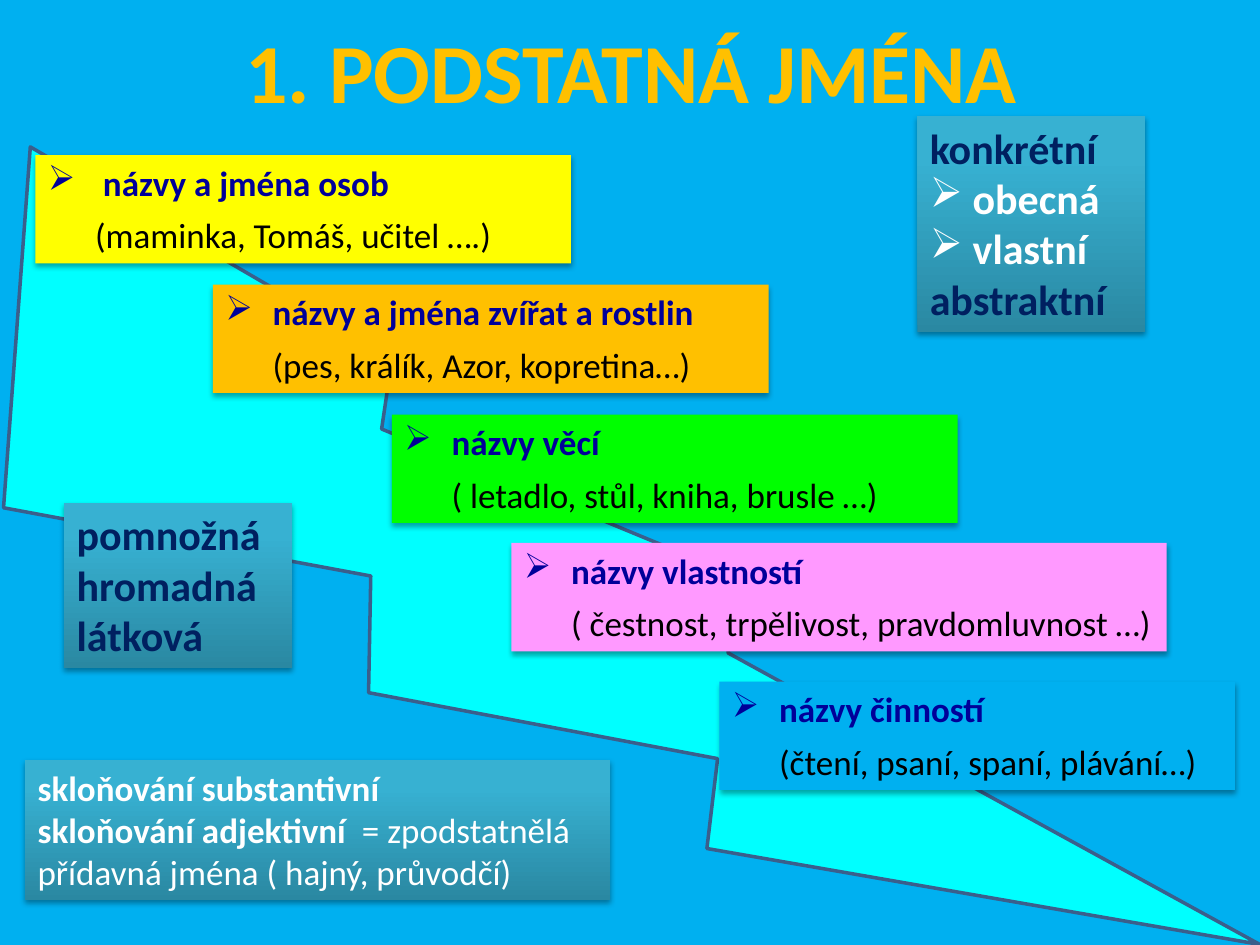
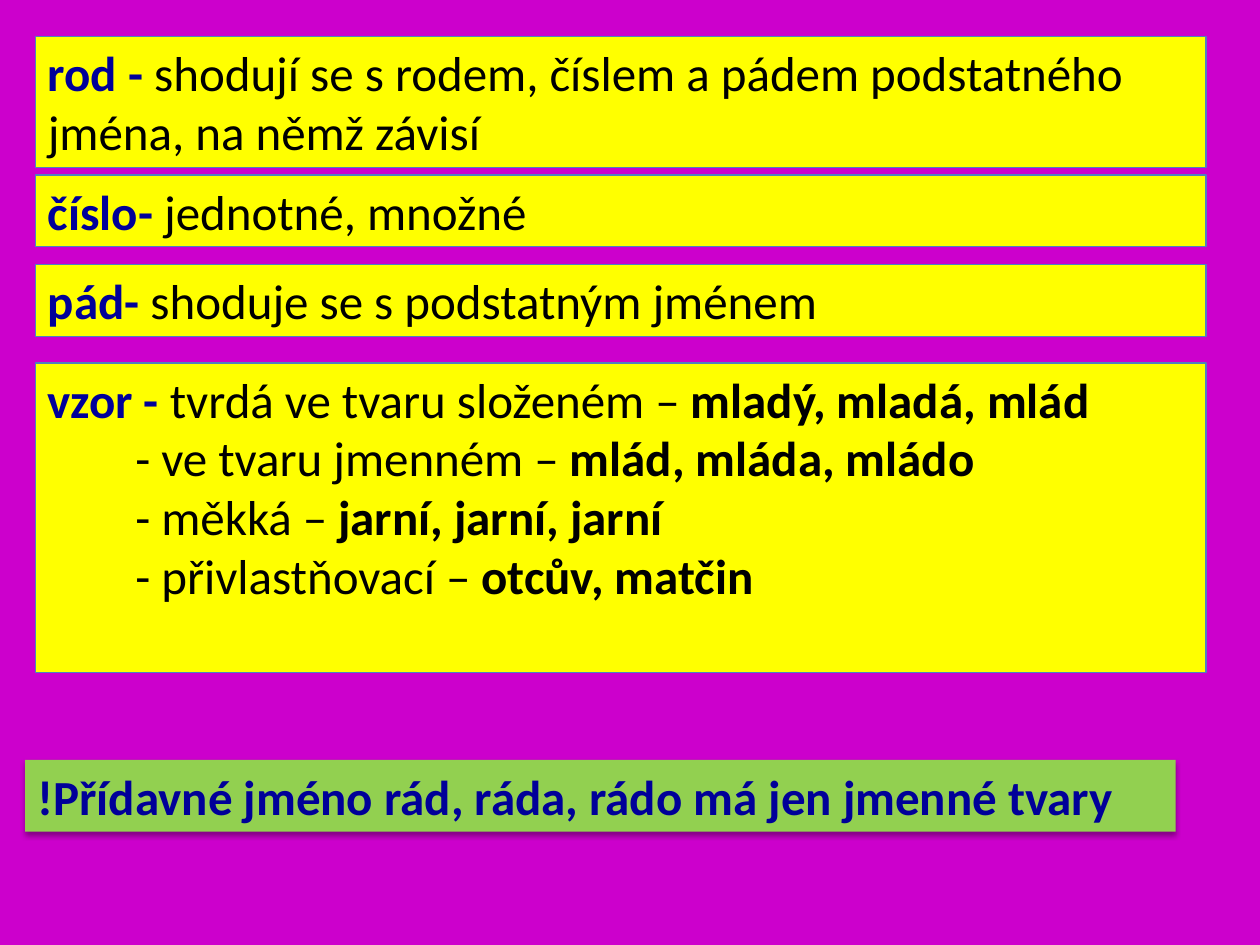
"""Build two grammar slides on Czech nouns and adjectives."""
import pptx
import pptx.dml.color
import pptx.enum.shapes
import pptx.enum.text
import pptx.oxml
import pptx.oxml.ns
import pptx.util

Pt = pptx.util.Pt


class Theme:
    font = "Calibri"
    sky, plum = "00B0F0", "CC00CC"
    navy, deep, black, white = "000099", "002060", "000000", "FFFFFF"
    gold, yellow, lime, pink = "FFC000", "FFFF00", "00FF00", "FF99FF"
    cyan, leaf = "00FFFF", "92D050"
    edge, rim = "3A5F8C", "4F81BD"
    dark, light = "2A88A2", "37B1D2"
    head, large, mid, small = 48, 28, 24, 20


TITLE = "1. PODSTATNÁ JMÉNA"
BOLT = (125.3, -42.5, 375.8, 805.7)
STEP_H = 61.9
STEPS = [
    (20.2, 88.6, 306, Theme.yellow, " názvy a jména osob", "(maminka, Tomáš, učitel ….)"),
    (121.7, 162.7, 317.5, Theme.gold, "názvy a jména zvířat a rostlin",
     "(pes, králík, Azor, kopretina…)"),
    (223.9, 236.9, 323.3, Theme.lime, "názvy věcí", "( letadlo, stůl, kniha, brusle …)"),
    (292.3, 310.3, 374.4, Theme.pink, "názvy vlastností",
     "( čestnost, trpělivost, pravdomluvnost …)"),
    (411.1, 389.5, 294.5, Theme.sky, "názvy činností", "(čtení, psaní, spaní, plávání…)"),
]
PANELS = [
    ((524.2, 66.2, 130.3, 123.8), Theme.mid, [
        ([("konkrétní", Theme.deep, True)], {}),
        ([(" obecná", Theme.white, True)], {"mark": Theme.white}),
        ([(" vlastní", Theme.white, True)], {"mark": Theme.white}),
        ([("abstraktní", Theme.deep, True)], {})]),
    ((14.4, 434.2, 334.1, 79.9), Theme.small, [
        ([("skloňování substantivní", Theme.white, True)], {}),
        ([("skloňování adjektivní  ", Theme.white, True),
          ("= zpodstatnělá přídavná jména ( hajný, průvodčí)", Theme.white, False)], {})]),
    ((36.7, 287.3, 130.3, 94.3), Theme.mid, [
        ([(word, Theme.deep, True)], {}) for word in ("pomnožná", "hromadná", "látková")]),
]
CARD_X, CARD_W = 20.2, 668.9
CARDS = [
    (20.9, 74.9, "rod -",
     [(" shodují se s rodem, číslem a pádem podstatného jména, na němž závisí", "")]),
    (100.1, 41, "číslo-", [(" jednotné, množné", "")]),
    (151.2, 41, "pád-", [(" shoduje se s podstatným jménem", "")]),
    (207.4, 177.1, "vzor -", [
        (" tvrdá ve tvaru složeném – ", "mladý, mladá, mlád"),
        ("- ve tvaru jmenném – ", "mlád, mláda, mládo"),
        ("- měkká – ", "jarní, jarní, jarní"),
        ("- přivlastňovací – ", "otcův, matčin")]),
]
NOTE = "!Přídavné jméno rád, ráda, rádo má jen jmenné tvary"
NOTE_BOX = (14.4, 434.2, 657.4, 41)
HANG, INSET = 27, 50


def rgb(code):
    """Turn a hex code into a colour."""
    return pptx.dml.color.RGBColor.from_string(code)


def paint(fill, code):
    """Fill with one solid colour."""
    fill.solid()
    fill.fore_color.rgb = rgb(code)


def attach(node, xml):
    """Append a drawing element given as text."""
    space = pptx.oxml.ns.nsdecls("a")
    node.append(pptx.oxml.parse_xml(xml.replace(">", f" {space}>", 1)
                                    if "/>" not in xml.split(">")[0] + ">"
                                    else xml.replace("/>", f" {space}/>", 1)))


def write(par, runs, size, mark=None, left=0, first=0, gap=0):
    """Write one paragraph run by run, with an optional bullet."""
    par.alignment = pptx.enum.text.PP_ALIGN.LEFT
    par.space_before = Pt(gap)
    props = par._p.get_or_add_pPr()
    props.set("marL", str(Pt(left)))
    props.set("indent", str(Pt(first)))
    if mark:
        attach(props, f'<a:buClr><a:srgbClr val="{mark}"/></a:buClr>')
        attach(props, '<a:buChar char="➢"/>')
    for text, ink, bold in runs:
        run = par.add_run()
        run.text = text
        style(run.font, size, ink, bold)


def style(font, size, ink, bold):
    """Set the look of a run."""
    font.name, font.size, font.bold = Theme.font, Pt(size), bold
    font.color.rgb = rgb(ink)


def shape(slide, kind, box, fill=None, line=None, width=1, shade=False):
    """Draw a preset shape; without a fill colour it gets the gradient."""
    item = slide.shapes.add_shape(kind, *map(Pt, box))
    item.shadow.inherit = False
    if fill:
        paint(item.fill, fill)
    else:
        item.fill.gradient()
        item.fill.gradient_angle = 90
        for stop, code, spot in zip(item.fill.gradient_stops, (Theme.dark, Theme.light), (0, 0.8)):
            stop.color.rgb = rgb(code)
            stop.position = spot
    if line:
        item.line.color.rgb = rgb(line)
        item.line.width = Pt(width)
    else:
        item.line.fill.background()
    if shade:
        effect = item._element.spPr.find(pptx.oxml.ns.qn("a:effectLst"))
        attach(effect, f'<a:outerShdw blurRad="{Pt(3.1)}" dist="{Pt(1.8)}" dir="5400000" '
                       'rotWithShape="0"><a:srgbClr val="000000"><a:alpha val="35000"/>'
                       '</a:srgbClr></a:outerShdw>')
    return item


def block(slide, box, pars, size, **look):
    """Draw a text box from (runs, options) pairs."""
    item = shape(slide, pptx.enum.shapes.MSO_SHAPE.RECTANGLE, box, **look)
    frame = item.text_frame
    frame.word_wrap = True
    frame.vertical_anchor = pptx.enum.text.MSO_ANCHOR.TOP
    for num, (runs, opts) in enumerate(pars):
        par = frame.add_paragraph() if num else frame.paragraphs[0]
        write(par, runs, size, **opts)


def page(deck, layout, back):
    """Add a slide with a plain background."""
    slide = deck.slides.add_slide(deck.slide_layouts[layout])
    paint(slide.background.fill, back)
    return slide


def nouns(deck):
    """Build the slide on nouns."""
    slide = page(deck, 5, Theme.sky)
    bolt = shape(slide, pptx.enum.shapes.MSO_SHAPE.LIGHTNING_BOLT, BOLT,
                 Theme.cyan, Theme.edge, 2)
    bolt.rotation = 318.8
    title = slide.shapes.title
    title.left, title.top, title.width, title.height = map(Pt, (36.7, 0, 648, 79.9))
    title.text_frame.vertical_anchor = pptx.enum.text.MSO_ANCHOR.MIDDLE
    par = title.text_frame.paragraphs[0]
    par.alignment = pptx.enum.text.PP_ALIGN.CENTER
    run = par.add_run()
    run.text = TITLE
    style(run.font, Theme.head, Theme.gold, True)
    for left, top, width, fill, name, sample in STEPS:
        pars = [([(name, Theme.navy, True)],
                 {"mark": Theme.navy, "left": HANG, "first": -HANG, "gap": 6}),
                ([(sample, Theme.black, False)], {"left": HANG, "gap": 6})]
        block(slide, (left, top, width, STEP_H), pars, Theme.small, fill=fill, shade=True)
    for box, size, pars in PANELS:
        block(slide, box, pars, size, shade=True)


def traits(deck):
    """Build the slide on adjectives."""
    slide = page(deck, 6, Theme.plum)
    block(slide, NOTE_BOX, [([(NOTE, Theme.navy, True)], {})], Theme.large,
          fill=Theme.leaf, shade=True)
    for top, height, term, lines in CARDS:
        pars = []
        for num, (plain, strong) in enumerate(lines):
            runs = [] if num else [(term, Theme.navy, True)]
            runs.append((plain, Theme.black, False))
            if strong:
                runs.append((strong, Theme.black, True))
            pars.append((runs, {"left": INSET if num else 0}))
        block(slide, (CARD_X, top, CARD_W, height), pars, Theme.large,
              fill=Theme.yellow, line=Theme.rim, width=0.75)


def main():
    """Build and save the deck."""
    deck = pptx.Presentation()
    deck.slide_width, deck.slide_height = Pt(720), Pt(540)
    nouns(deck)
    traits(deck)
    deck.save("out.pptx")


if __name__ == "__main__":
    main()
